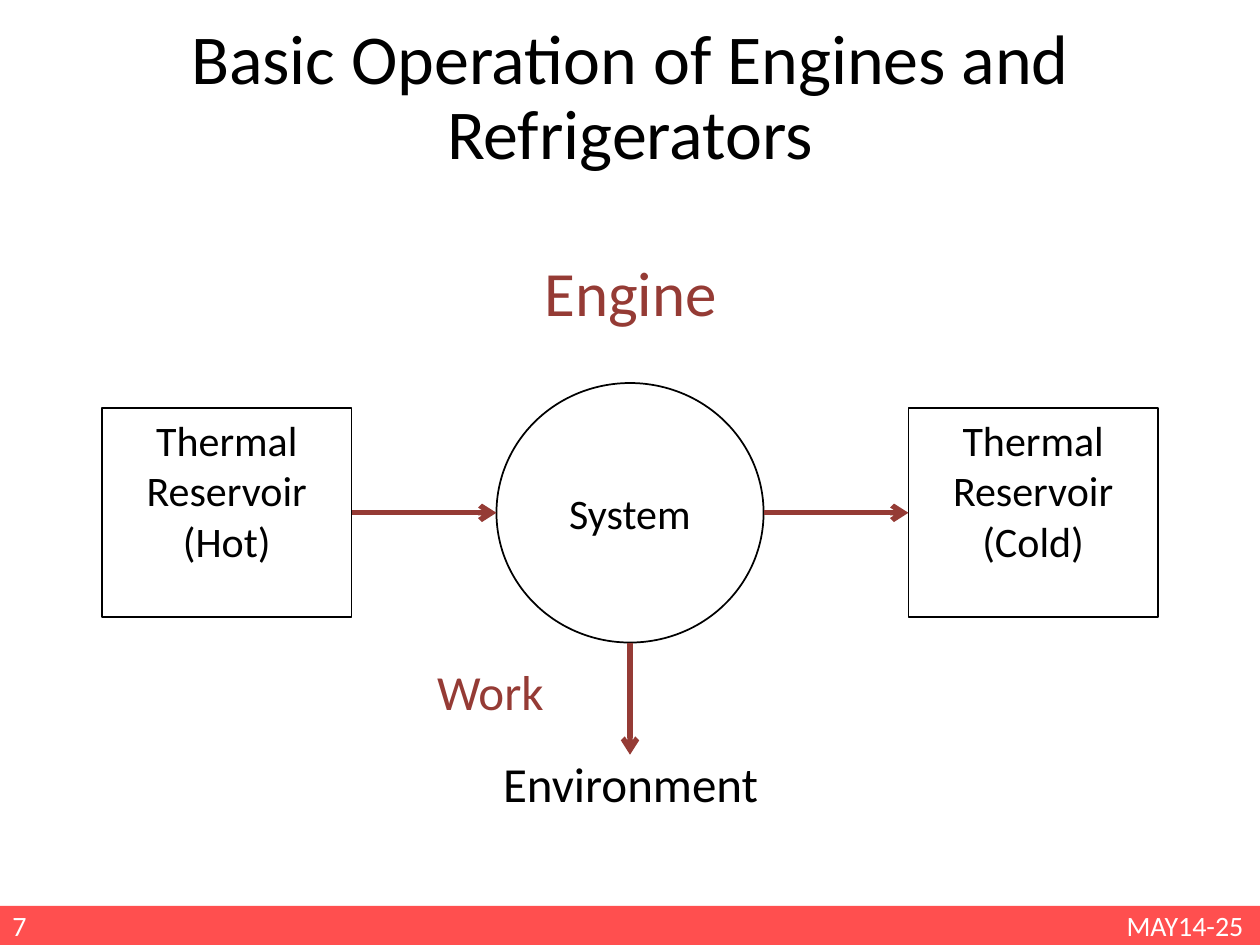
"""Build a slide showing how a heat engine moves energy between reservoirs."""
from dataclasses import dataclass

from pptx import Presentation
from pptx.dml.color import RGBColor as RGB
from pptx.enum.shapes import MSO_CONNECTOR as CONN, MSO_SHAPE as SHAPE
from pptx.enum.text import MSO_ANCHOR as ANCHOR, PP_ALIGN as ALIGN
from pptx.oxml import parse_xml
from pptx.oxml.ns import nsdecls
from pptx.util import Inches, Pt


@dataclass(frozen=True)
class Theme:
    font: str = "Calibri"
    ink: RGB = RGB(0x00, 0x00, 0x00)
    accent: RGB = RGB(0x95, 0x3B, 0x35)
    bar: RGB = RGB(0xFF, 0x4F, 0x4F)
    light: RGB = RGB(0xFF, 0xFF, 0xFF)
    title: int = 40
    heading: int = 36
    label: int = 28
    body: int = 24
    footer: int = 16
    outline: int = 1
    arrow: int = 3


class SlideBuilder:
    def __init__(self, slide, theme):
        self.s = slide
        self.theme = theme

    def set_text(self, sp, text, size, color, align=ALIGN.CENTER, anchor=ANCHOR.TOP, spacing=None):
        tf = sp.text_frame
        tf.word_wrap = True
        tf.vertical_anchor = anchor
        tf.text = text
        for p in tf.paragraphs:
            p.alignment = align
            p.line_spacing = spacing
            for r in p.runs:
                r.font.name = self.theme.font
                r.font.size = Pt(size)
                r.font.color.rgb = color

    def text(self, box, text, size, color, **style):
        sp = self.s.shapes.add_textbox(*map(Inches, box))
        self.set_text(sp, text, size, color, **style)
        return sp

    def bar(self, box):
        sp = self.s.shapes.add_shape(SHAPE.RECTANGLE, *map(Inches, box))
        sp.shadow.inherit = False
        sp.fill.solid()
        sp.fill.fore_color.rgb = self.theme.bar
        sp.line.fill.background()
        return sp

    def outline(self, kind, box, text=""):
        sp = self.s.shapes.add_shape(kind, *map(Inches, box))
        sp.shadow.inherit = False
        sp.fill.background()
        sp.line.color.rgb = self.theme.ink
        sp.line.width = Pt(self.theme.outline)
        if text:
            self.set_text(sp, text, self.theme.body, self.theme.ink)
        return sp

    def arrow(self, start, end, source=None, target=None):
        cx = self.s.shapes.add_connector(CONN.STRAIGHT, *map(Inches, start + end))
        cx.line.color.rgb = self.theme.accent
        cx.line.width = Pt(self.theme.arrow)
        cx.line._get_or_add_ln().append(parse_xml(f'<a:tailEnd {nsdecls("a")} type="arrow"/>'))
        cx._element.spPr.append(parse_xml(f'<a:effectLst {nsdecls("a")}/>'))
        if source is not None:
            cx.begin_connect(source, 3)
        if target is not None:
            cx.end_connect(target, 1)
        return cx


def main():
    prs = Presentation()
    prs.slide_width, prs.slide_height = Inches(10), Inches(7.5)
    t = Theme()
    b = SlideBuilder(prs.slides.add_slide(prs.slide_layouts[6]), t)

    bar_top, bar_h = 7.19, 0.31
    b.bar((0, bar_top, 10, bar_h))
    b.text((0.44, 0.24, 9.12, 1.1), "Basic Operation of Engines and Refrigerators",
           t.title, t.ink, anchor=ANCHOR.MIDDLE, spacing=0.9)
    b.text((8.81, bar_top, 1.19, bar_h), "MAY14-25", t.footer, t.light, anchor=ANCHOR.MIDDLE)
    b.text((0, bar_top, 0.48, bar_h), "7", t.footer, t.light,
           align=ALIGN.LEFT, anchor=ANCHOR.MIDDLE)

    mid_x, mid_y = 5, 4.07
    sys_w, sys_h = 2.12, 2.06
    res_w, res_h = 1.98, 1.66
    gap = 1.15
    sys_left, sys_right = mid_x - sys_w / 2, mid_x + sys_w / 2
    sys_bottom = mid_y + sys_h / 2
    res_top = mid_y - res_h / 2

    b.text((3.18, 1.96, 3.65, 0.71), "Engine", t.heading, t.accent)
    b.outline(SHAPE.OVAL, (sys_left, mid_y - sys_h / 2, sys_w, sys_h))
    b.text((4.22, 3.82, 1.56, 0.5), "System", t.body, t.ink)
    hot, cold = (
        b.outline(SHAPE.RECTANGLE, (left, res_top, res_w, res_h), f"Thermal\nReservoir\n({name})")
        for left, name in ((sys_left - gap - res_w, "Hot"), (sys_right + gap, "Cold"))
    )
    b.text((3.62, 5.93, 2.77, 0.57), "Environment", t.label, t.ink)

    b.arrow((sys_left - gap, mid_y), (sys_left, mid_y), source=hot)
    b.arrow((sys_right, mid_y), (sys_right + gap, mid_y), target=cold)
    b.arrow((mid_x, sys_bottom), (mid_x, 5.99))
    b.text((3.37, 5.2, 1.25, 0.57), "Work", t.label, t.accent, align=ALIGN.LEFT)

    prs.save("out.pptx")


if __name__ == "__main__":
    main()
